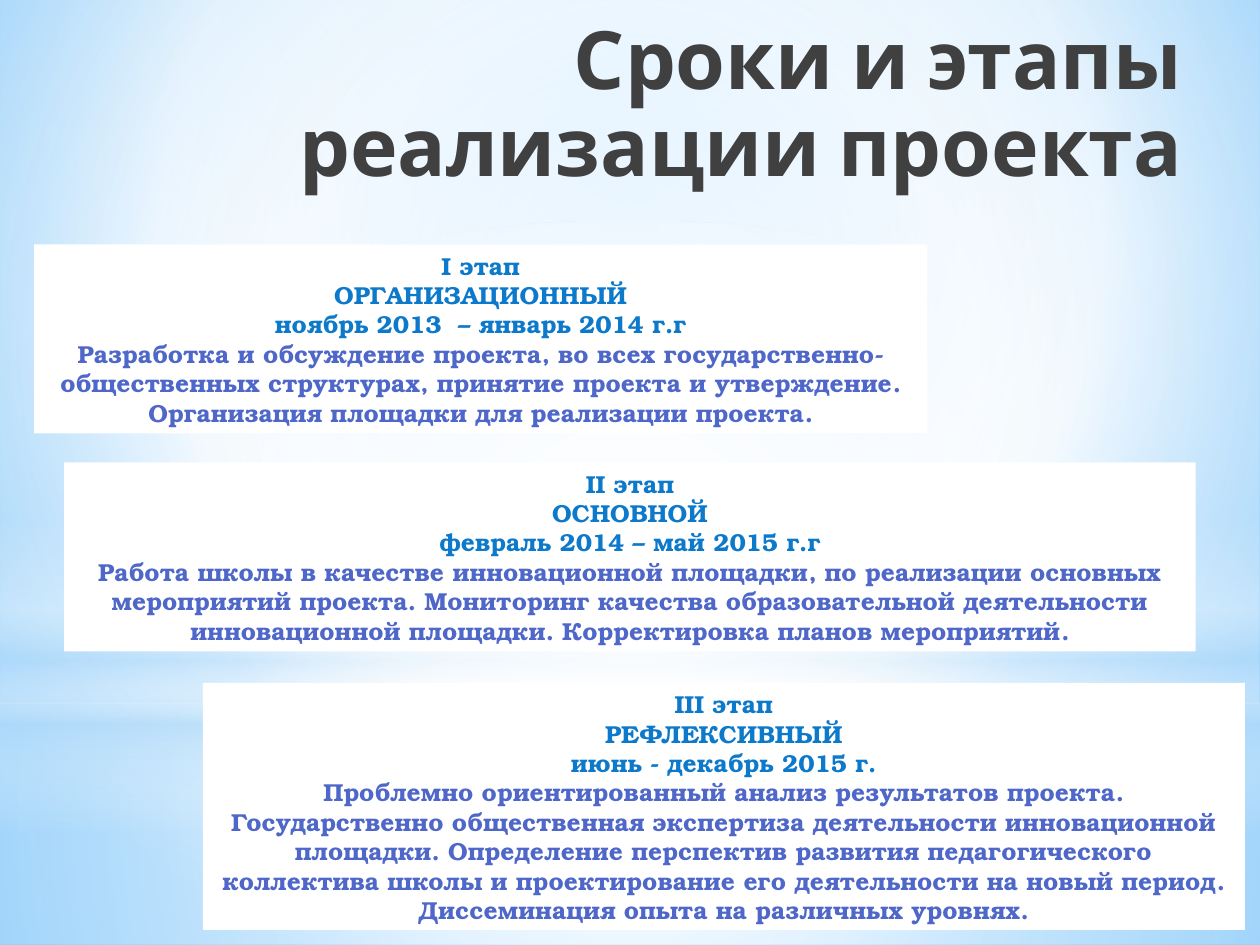
"""Build a slide on the dates and stages of a school project."""
from lxml import etree
from pptx import Presentation
from pptx.dml.color import RGBColor
from pptx.enum.shapes import MSO_SHAPE
from pptx.enum.text import MSO_ANCHOR, MSO_AUTO_SIZE, PP_ALIGN
from pptx.oxml.ns import qn
from pptx.util import Inches, Pt

RECT, OVAL = MSO_SHAPE.RECTANGLE, MSO_SHAPE.OVAL
TOP, NO_FIT = MSO_ANCHOR.TOP, MSO_AUTO_SIZE.NONE
CENTER, RIGHT = PP_ALIGN.CENTER, PP_ALIGN.RIGHT
HEX = {
    "white": "FFFFFF", "sky": "9ED5FF", "blue": "5BB9FF", "pale": "B4DCFA",
    "title": "404040", "head": "0D79CA", "body": "4E67C8",
}
MID = (50, 50, 50, 50)


def color(name):
    return RGBColor.from_string(HEX[name])


def shade(fill, host, stops, rect):
    fill.gradient()
    grad = host.find(".//" + qn("a:gradFill"))
    for child in list(grad):
        grad.remove(child)
    grad.set("rotWithShape", "1")
    items = etree.SubElement(grad, qn("a:gsLst"))
    for pos, name, alpha in stops:
        stop = etree.SubElement(items, qn("a:gs"), pos=str(pos * 1000))
        tint = etree.SubElement(stop, qn("a:srgbClr"), val=HEX[name])
        if alpha < 100:
            etree.SubElement(tint, qn("a:alpha"), val=str(alpha * 1000))
    if rect:
        focus = etree.SubElement(grad, qn("a:path"), path="circle")
        sides = {side: str(part * 1000) for side, part in zip("ltrb", rect)}
        etree.SubElement(focus, qn("a:fillToRect"), sides)
    else:
        etree.SubElement(grad, qn("a:lin"), ang="5400000", scaled="0")


deck = Presentation()
deck.slide_width, deck.slide_height = Inches(10), Inches(7.5)
slide = deck.slides.add_slide(deck.slide_layouts[5])
shade(slide.background.fill, slide.element,
      [(0, "sky", 100), (60, "white", 100), (100, "blue", 100)], (20, 10, 20, 60))

glows = [
    (RECT, 5.58, 1.92, [(0, "white", 91), (37, "white", 76), (100, "pale", 79)], MID),
    (RECT, 0, 5.58, [(0, "white", 89), (48, "white", 62), (100, "pale", 79)], MID),
    (RECT, 4.12, 2.5, [(0, "white", 0), (29, "white", 30), (45, "pale", 40),
                       (55, "white", 26), (65, "pale", 60), (100, "white", 0)], None),
    (OVAL, 1.75, 5.58, [(0, "white", 100), (56, "white", 0)], MID),
]
for kind, top, high, stops, rect in glows:
    glow = slide.shapes.add_shape(kind, 0, Inches(top), Inches(10), Inches(high))
    glow.shadow.inherit = False
    glow.line.fill.background()
    shade(glow.fill, glow.element, stops, rect)

title = slide.shapes.title
title.left, title.top = Inches(2.15), Inches(0.11)
title.width, title.height = Inches(7.33), Inches(1.25)
frame = title.text_frame
frame.text = "Сроки и этапы реализации проекта"
frame.word_wrap = True
frame.auto_size = NO_FIT
frame.vertical_anchor = TOP
para = frame.paragraphs[0]
para.alignment = RIGHT
para.line_spacing = 0.9
para.font.name, para.font.size, para.font.bold = "Cabin", Pt(46), True
para.font.color.rgb = color("title")
slide.shapes._spTree.append(title.element)

stages = [
    (0.27, 1.94, 7.09, 1.5, [
        "I этап", "ОРГАНИЗАЦИОННЫЙ", "ноябрь 2013  – январь 2014 г.г",
        "Разработка и обсуждение проекта, во всех государственно-общественных "
        "структурах, принятие проекта и утверждение. Организация площадки для "
        "реализации проекта."]),
    (0.51, 3.67, 8.98, 1.5, [
        "II этап", "ОСНОВНОЙ", "февраль 2014 – май 2015 г.г",
        "Работа школы в качестве инновационной площадки, по реализации основных "
        "мероприятий проекта. Мониторинг качества образовательной деятельности "
        "инновационной площадки. Корректировка планов мероприятий."]),
    (1.61, 5.42, 8.27, 1.96, [
        "III этап", "РЕФЛЕКСИВНЫЙ", "июнь - декабрь 2015 г.",
        "Проблемно ориентированный анализ результатов проекта. Государственно "
        "общественная экспертиза деятельности инновационной площадки. Определение "
        "перспектив развития педагогического коллектива школы и проектирование его "
        "деятельности на новый период. Диссеминация опыта на различных уровнях."]),
]
for left, top, wide, high, lines in stages:
    box = slide.shapes.add_shape(RECT, Inches(left), Inches(top), Inches(wide), Inches(high))
    box.shadow.inherit = False
    box.fill.solid()
    box.fill.fore_color.rgb = color("white")
    box.line.fill.background()
    frame = box.text_frame
    frame.word_wrap = True
    frame.vertical_anchor = TOP
    frame.text = "\n".join(lines)
    for para in frame.paragraphs:
        para.alignment = CENTER
        para.font.name, para.font.size, para.font.bold = "TeX Gyre Bonum", Pt(14), True
        para.font.color.rgb = color("body" if para.text == lines[-1] else "head")

deck.save("out.pptx")
